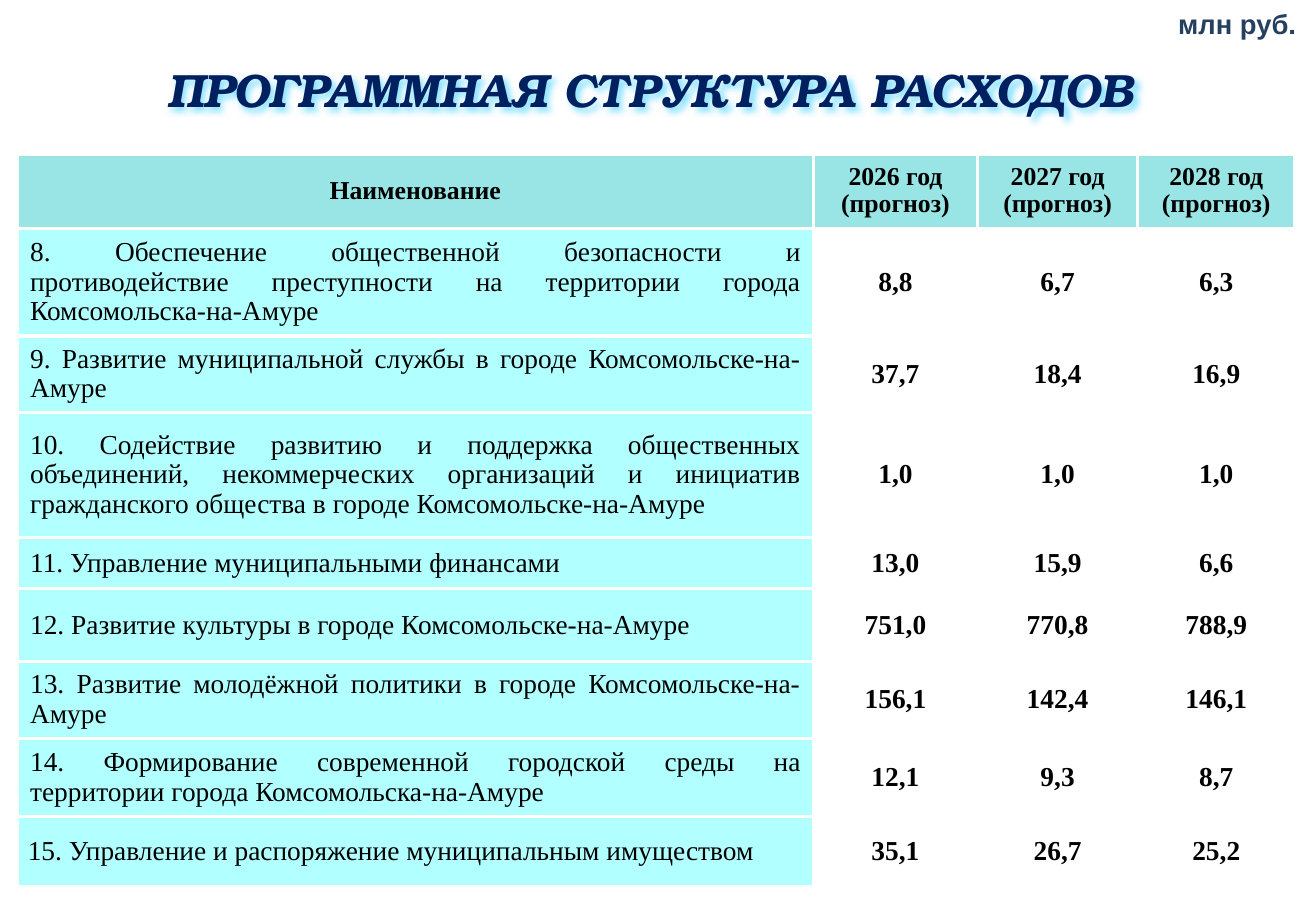
import pptx
import pptx.util
import pptx.dml.color
import pptx.enum.text
import pptx.oxml
import pptx.oxml.ns

Inches, Pt = pptx.util.Inches, pptx.util.Pt
ALIGN = pptx.enum.text.PP_ALIGN
ANCHOR = pptx.enum.text.MSO_ANCHOR
COLORS = {
    "title": "002060",
    "glow": "33CCFF",
    "unit": "254061",
    "text": "000000",
    "header": "99E5E5",
    "name": "B2FFFF",
    "border": "FFFFFF",
}
COLUMN_WIDTHS = [6.87, 1.42, 1.38, 1.36]
ROW_HEIGHTS = [0.64, 0.93, 0.66, 1.08, 0.44, 0.63, 0.66, 0.68, 0.6]
HEADER = ["Наименование", "2026 год (прогноз)", "2027 год (прогноз)", "2028 год (прогноз)"]
PROGRAMMES = [
    ["8. Обеспечение общественной безопасности и противодействие преступности "
     "на территории города Комсомольска-на-Амуре", "8,8", "6,7", "6,3"],
    ["9. Развитие муниципальной службы в городе Комсомольске-на-Амуре", "37,7", "18,4", "16,9"],
    ["10. Содействие развитию и поддержка общественных объединений, "
     "некоммерческих организаций и инициатив гражданского общества "
     "в городе Комсомольске-на-Амуре", "1,0", "1,0", "1,0"],
    ["11. Управление муниципальными финансами", "13,0", "15,9", "6,6"],
    ["12. Развитие культуры в городе Комсомольске-на-Амуре", "751,0", "770,8", "788,9"],
    ["13. Развитие молодёжной политики в городе Комсомольске-на-Амуре", "156,1", "142,4", "146,1"],
    ["14. Формирование современной городской среды на территории города "
     "Комсомольска-на-Амуре", "12,1", "9,3", "8,7"],
    ["15. Управление и распоряжение муниципальным имуществом", "35,1", "26,7", "25,2"],
]
WIDE_GAPS = {1: 4, 7: 5}


def style_font(font, name, size, color, bold=True, italic=False):
    font.name, font.size, font.bold, font.italic = name, Pt(size), bold, italic
    font.color.rgb = pptx.dml.color.RGBColor.from_string(COLORS[color])


def set_margins(target, across, down):
    target.margin_left = target.margin_right = Inches(across)
    target.margin_top = target.margin_bottom = Inches(down)


def place_title(page, box):
    title = page.shapes.title
    title.left, title.top, title.width, title.height = map(Inches, box)
    frame = title.text_frame
    frame.text = "ПРОГРАММНАЯ СТРУКТУРА РАСХОДОВ"
    frame.word_wrap = True
    frame.auto_size = pptx.enum.text.MSO_AUTO_SIZE.NONE
    frame.vertical_anchor = ANCHOR.BOTTOM
    set_margins(frame, 0.12, 0.12)
    para = frame.paragraphs[0]
    para.alignment = ALIGN.CENTER
    style_font(para.runs[0].font, "TeX Gyre Bonum", 29, "title", italic=True)
    title._element.spPr.append(pptx.oxml.parse_xml(
        f'<a:effectLst {pptx.oxml.ns.nsdecls("a")}>'
        '<a:outerShdw blurRad="50800" dist="38100" dir="2700000">'
        f'<a:srgbClr val="{COLORS["glow"]}"><a:alpha val="60000"/></a:srgbClr>'
        '</a:outerShdw></a:effectLst>'))


def place_unit(page, box):
    unit = page.shapes.add_textbox(*map(Inches, box))
    frame = unit.text_frame
    frame.text = "млн руб."
    frame.word_wrap = False
    set_margins(frame, 0.12, 0.06)
    style_font(frame.paragraphs[0].runs[0].font, "Arial", 17, "unit")


def add_borders(cell):
    properties = cell._tc.get_or_add_tcPr()
    for side in ("lnL", "lnR", "lnT", "lnB"):
        properties.append(pptx.oxml.parse_xml(
            f'<a:{side} {pptx.oxml.ns.nsdecls("a")} w="{Pt(2.25)}"><a:solidFill>'
            f'<a:srgbClr val="{COLORS["border"]}"/></a:solidFill></a:{side}>'))


def write_name(para, text, wide_gaps):
    words = text.split(" ", wide_gaps)
    for word in words[:-1]:
        para.add_run().text = word
        gap = para.add_run()
        gap.text = " "
        gap.font._element.set("spc", "900")
    para.add_run().text = words[-1]


def fill_cell(cell, text, row, column):
    is_header, is_name = row == 0, column == 0
    add_borders(cell)
    if is_header or is_name:
        cell.fill.solid()
        cell.fill.fore_color.rgb = pptx.dml.color.RGBColor.from_string(
            COLORS["header" if is_header else "name"])
    else:
        cell.fill.background()
    cell.vertical_anchor = ANCHOR.MIDDLE
    if is_name and row == len(PROGRAMMES):
        set_margins(cell, 0.09, 0)
    else:
        set_margins(cell, 0.11, 0.07)
    para = cell.text_frame.paragraphs[0]
    para.line_spacing = 0.95 if is_header else 0.97
    para.alignment = ALIGN.JUSTIFY if is_name and not is_header else ALIGN.CENTER
    write_name(para, text, WIDE_GAPS.get(row, 0) if is_name else 0)
    for span in para.runs:
        style_font(span.font, "Times New Roman", 16 if is_header else 17, "text",
                   bold=is_header or not is_name)


def place_table(page, left, top):
    rows = [HEADER] + PROGRAMMES
    table = page.shapes.add_table(
        len(rows), len(HEADER), Inches(left), Inches(top),
        Inches(sum(COLUMN_WIDTHS)), Inches(sum(ROW_HEIGHTS))).table
    table.first_row = table.horz_banding = False
    for column, width in zip(table.columns, COLUMN_WIDTHS):
        column.width = Inches(width)
    for line, height in zip(table.rows, ROW_HEIGHTS):
        line.height = Inches(height)
    for row, texts in enumerate(rows):
        for column, text in enumerate(texts):
            fill_cell(table.cell(row, column), text, row, column)


def main():
    deck = pptx.Presentation()
    deck.slide_width, deck.slide_height = Inches(11.36), Inches(7.93)
    page = deck.slides.add_slide(deck.slide_layouts[5])
    place_title(page, (0.95, 0.13, 9.33, 1))
    place_table(page, 0.15, 1.33)
    place_unit(page, (10.05, 0, 1.28, 0.41))
    deck.save("out.pptx")


if __name__ == "__main__":
    main()
